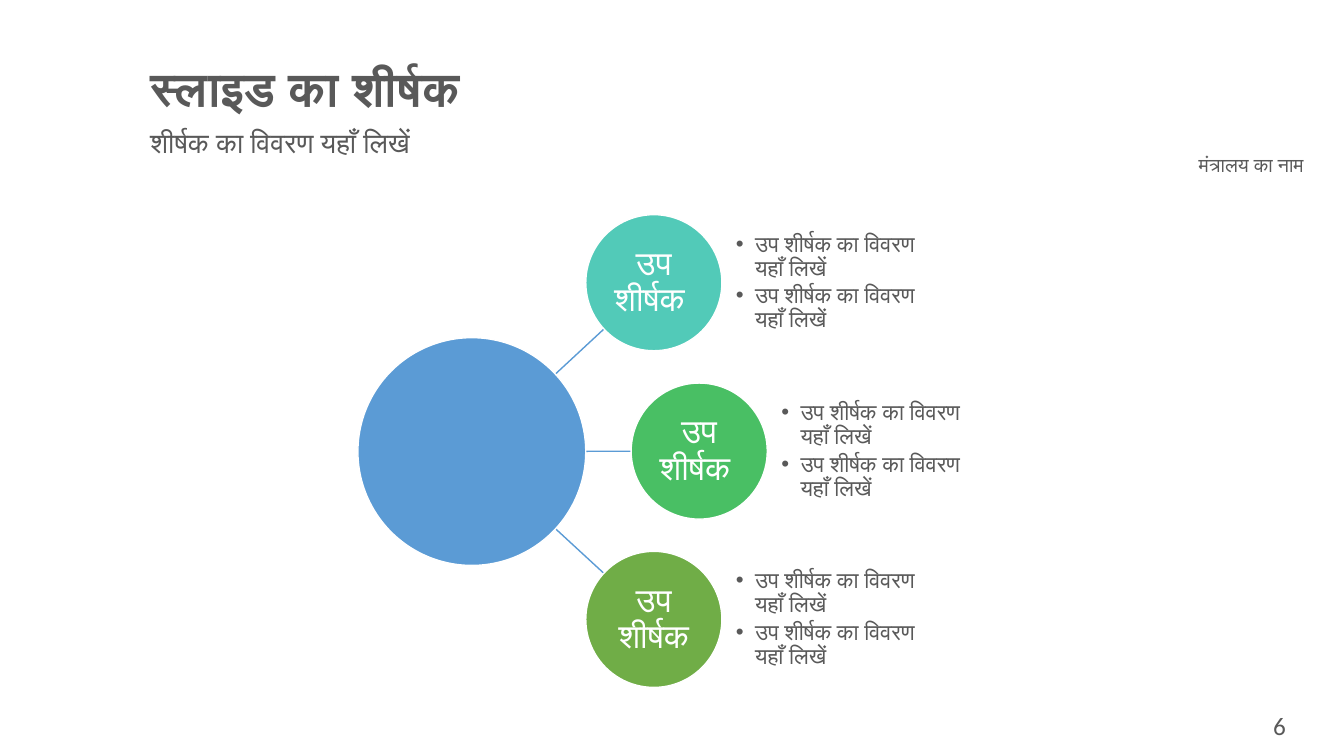
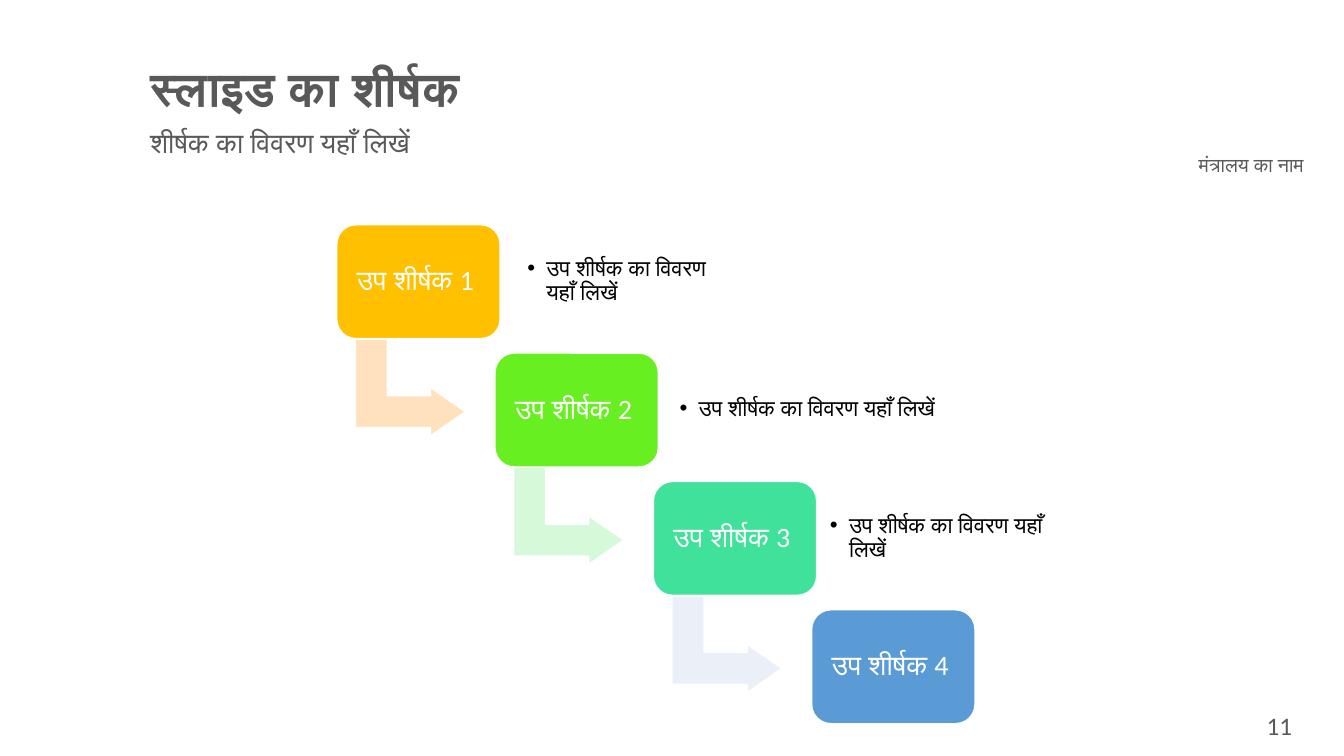
"""Build two diagram slides: a hub with three satellites and a four-step staircase."""
from dataclasses import dataclass
from math import hypot

from lxml.etree import SubElement
from pptx import Presentation
from pptx.dml.color import RGBColor
from pptx.enum.shapes import MSO_CONNECTOR, MSO_SHAPE
from pptx.enum.text import MSO_ANCHOR, PP_ALIGN
from pptx.oxml.ns import qn
from pptx.util import Inches, Pt

TITLE = "स्लाइड का शीर्षक"
SUBTITLE = "शीर्षक का विवरण यहाँ लिखें"
MINISTRY = "मंत्रालय का नाम"
DETAIL = "उप शीर्षक का विवरण यहाँ लिखें"

SATELLITES = [
    {"label": "उप शीर्षक ", "fill": "52CAB8", "left": 5.81, "details": [DETAIL, DETAIL]},
    {"label": "उप शीर्षक ", "fill": "49BF64", "left": 6.26, "details": [DETAIL, DETAIL]},
    {"label": "उप शीर्षक", "fill": "70AD47", "left": 5.81, "details": [DETAIL, DETAIL]},
]
STEPS = [
    {"label": "उप शीर्षक 1 ", "fill": "FFC000", "arrow": "FFE2BD", "note": (5.14, 2.13)},
    {"label": "उप शीर्षक 2 ", "fill": "67EF21", "arrow": "D6F9D9", "note": (6.65, 3.14)},
    {"label": "उप शीर्षक 3 ", "fill": "3FE19B", "arrow": "EBF0F8", "note": (8.14, 2.62)},
    {"label": "उप शीर्षक 4 ", "fill": "5B9BD5"},
]


@dataclass(frozen=True)
class Theme:
    font: str = "Calibri"
    gray: str = "595959"
    black: str = "000000"
    white: str = "FFFFFF"
    blue: str = "5B9BD5"
    title: int = 34
    subtitle: int = 20
    ministry: int = 14
    number: int = 18
    circle: int = 24
    card: int = 20
    detail: int = 16
    spacing: float = 0.9


THEME = Theme()


def color(value):
    return RGBColor.from_string(value)


def write(frame, texts, size, ink, align=PP_ALIGN.LEFT, bold=False, spacing=None,
          inset=None, anchor=MSO_ANCHOR.TOP, bullets=False):
    frame.word_wrap = True
    frame.vertical_anchor = anchor
    if inset is not None:
        frame.margin_left = frame.margin_right = Inches(inset)
        frame.margin_top = frame.margin_bottom = Inches(inset)
    for index, text in enumerate(texts):
        paragraph = frame.add_paragraph() if index else frame.paragraphs[0]
        if bullets:
            properties = paragraph._p.get_or_add_pPr()
            properties.set("marL", str(Inches(0.19)))
            properties.set("indent", str(-Inches(0.19)))
            SubElement(properties, qn("a:buFont")).set("typeface", "Arial")
            SubElement(properties, qn("a:buChar")).set("char", "•")
            if index < len(texts) - 1:
                paragraph.space_after = Pt(2.5)
        paragraph.alignment = align
        if spacing:
            paragraph.line_spacing = spacing
        run = paragraph.add_run()
        run.text = text
        run.font.name = THEME.font
        run.font.size = Pt(size)
        run.font.bold = bold
        run.font.color.rgb = color(ink)


def add_text(slide, box, texts, size, ink=THEME.gray, **style):
    textbox = slide.shapes.add_textbox(*map(Inches, box))
    write(textbox.text_frame, texts, size, ink, **style)


def add_details(slide, box, texts, ink, inset):
    add_text(slide, box, texts, THEME.detail, ink, spacing=THEME.spacing,
             inset=inset, anchor=MSO_ANCHOR.MIDDLE, bullets=True)


def add_filled(slide, kind, box, fill, adjustments=()):
    shape = slide.shapes.add_shape(kind, *map(Inches, box))
    shape.shadow.inherit = False
    shape.fill.solid()
    shape.fill.fore_color.rgb = color(fill)
    shape.line.color.rgb = color(THEME.white)
    shape.line.width = Pt(1)
    for index, value in enumerate(adjustments):
        shape.adjustments[index] = value
    return shape


def add_label(shape, text, size, inset):
    write(shape.text_frame, [text], size, THEME.white, align=PP_ALIGN.CENTER,
          spacing=THEME.spacing, inset=inset, anchor=MSO_ANCHOR.MIDDLE)


def add_spoke(slide, start, end):
    spoke = slide.shapes.add_connector(
        MSO_CONNECTOR.STRAIGHT, *map(Inches, (*start, *end)))
    spoke.line.color.rgb = color(THEME.blue)
    spoke.line.width = Pt(1)
    SubElement(spoke._element.spPr, qn("a:effectLst"))


def add_framed_slide(presentation, number):
    slide = presentation.slides.add_slide(presentation.slide_layouts[6])
    add_text(slide, (11.79, 1.47, 1.57, 0.34), [MINISTRY], THEME.ministry)
    add_text(slide, (1.39, 0.6, 9.61, 0.55), [TITLE], THEME.title,
             bold=True, spacing=THEME.spacing)
    add_text(slide, (1.39, 1.23, 9.61, 0.63), [SUBTITLE], THEME.subtitle,
             spacing=THEME.spacing)
    add_text(slide, (12.1, 7, 1.18, 0.45), [str(number)], THEME.number,
             align=PP_ALIGN.CENTER)
    return slide


def build_hub(slide):
    hub_left, hub_top, hub_size, size = 3.55, 3.35, 2.26, 1.35
    first_top, pitch, spoke_left = 2.13, 1.67, 5.47
    hub_x, hub_y = hub_left + hub_size / 2, hub_top + hub_size / 2
    tops = [first_top + index * pitch for index in range(len(SATELLITES))]
    for satellite, top in zip(SATELLITES, tops):
        x, y = satellite["left"] + size / 2, top + size / 2
        across, down = x - hub_x, y - hub_y
        near = (spoke_left - hub_x) / across
        far = 1 - size / 2 / hypot(across, down)
        add_spoke(slide, *((hub_x + across * part, hub_y + down * part)
                           for part in (near, far)))
    add_filled(slide, MSO_SHAPE.OVAL, (hub_left, hub_top, hub_size, hub_size), THEME.blue)
    for satellite, top in zip(SATELLITES, tops):
        left = satellite["left"]
        circle = add_filled(slide, MSO_SHAPE.OVAL, (left, top, size, size), satellite["fill"])
        add_label(circle, satellite["label"], THEME.circle, 0.02)
        add_details(slide, (left + 1.49, top, 2.03, size), satellite["details"],
                    THEME.gray, 0)


def build_staircase(slide):
    first_left, first_top, last_top = 3.34, 2.23, 6.05
    width, height, step_across = 1.62, 1.13, 1.57
    step_down = (last_top - first_top) / (len(STEPS) - 1)
    for index, step in enumerate(STEPS):
        left, top = first_left + index * step_across, first_top + index * step_down
        if "arrow" in step:
            arrow = add_filled(slide, MSO_SHAPE.BENT_UP_ARROW,
                               (left + 0.25, top + 1.07, 0.96, 1.09),
                               step["arrow"], (0.33, 0.25, 0.36))
            arrow.rotation = 90
        card = add_filled(slide, MSO_SHAPE.ROUNDED_RECTANGLE,
                          (left, top, width, height), step["fill"], (0.17,))
        add_label(card, step["label"], THEME.card, 0.08)
        if "note" in step:
            note_left, note_width = step["note"]
            add_details(slide, (note_left, top + 0.1, note_width, 0.92), [DETAIL],
                        THEME.black, 0.09)


def main():
    presentation = Presentation()
    presentation.slide_width = Inches(13.33)
    presentation.slide_height = Inches(7.5)
    for number, build in ((6, build_hub), (11, build_staircase)):
        build(add_framed_slide(presentation, number))
    presentation.save("out.pptx")


if __name__ == "__main__":
    main()
